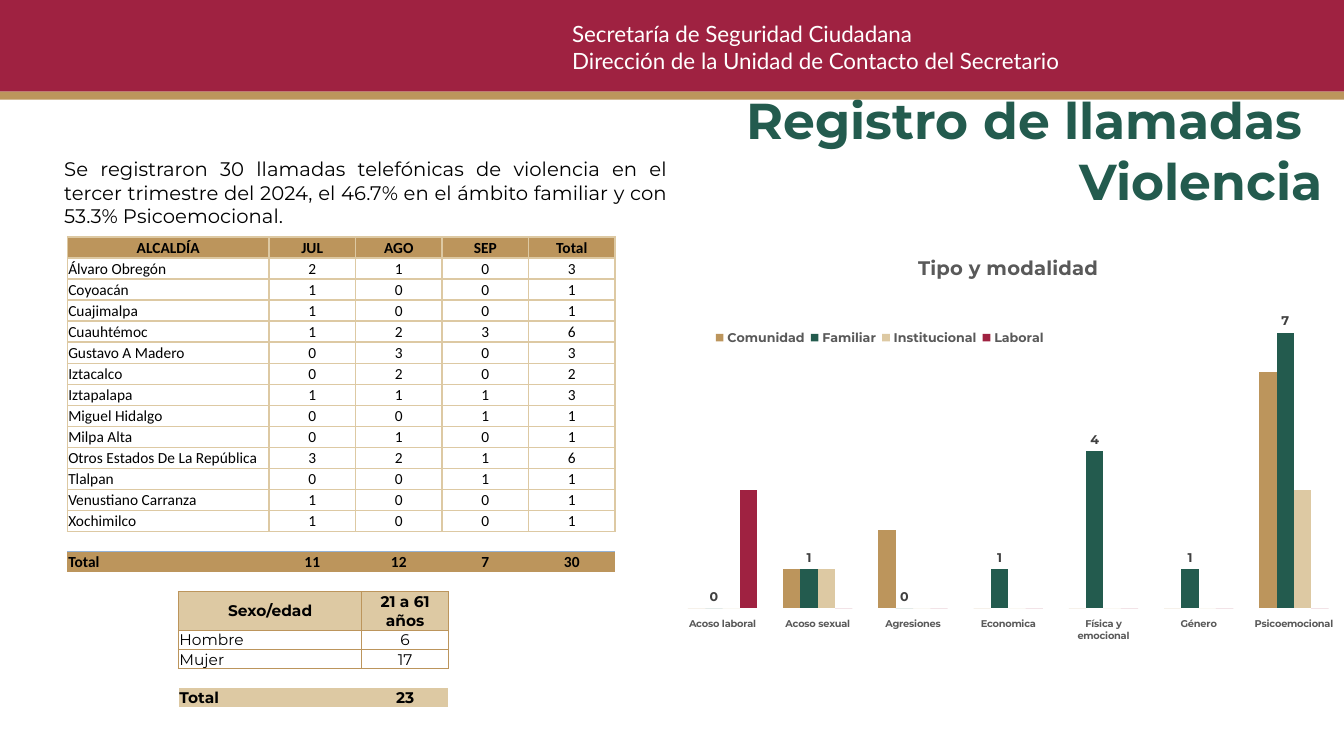
from dataclasses import dataclass
from typing import Optional

from lxml.etree import SubElement
from pptx import Presentation
from pptx.chart.data import CategoryChartData
from pptx.dml.color import RGBColor
from pptx.enum.chart import XL_CHART_TYPE as ChartType
from pptx.enum.chart import XL_LABEL_POSITION as LabelPosition
from pptx.enum.chart import XL_LEGEND_POSITION as LegendPosition
from pptx.enum.chart import XL_TICK_LABEL_POSITION as TickLabels
from pptx.enum.chart import XL_TICK_MARK as TickMark
from pptx.enum.shapes import MSO_SHAPE as Shape
from pptx.enum.text import MSO_ANCHOR as Anchor
from pptx.enum.text import PP_ALIGN as Align
from pptx.oxml import parse_xml
from pptx.oxml.ns import nsdecls, qn
from pptx.util import Cm, Pt

WINE = RGBColor(0x9F, 0x22, 0x41)
GOLD = RGBColor(0xBC, 0x95, 0x5C)
SAND = RGBColor(0xDD, 0xC9, 0xA3)
GREEN = RGBColor(0x23, 0x5B, 0x4E)
BLUE = RGBColor(0x95, 0xB3, 0xD7)
WHITE = RGBColor(0xFF, 0xFF, 0xFF)
BLACK = RGBColor(0, 0, 0)
GREY = RGBColor(0x59, 0x59, 0x59)
DARK_GREY = RGBColor(0x40, 0x40, 0x40)
MAIN_FONT = "Montserrat"


@dataclass
class Border:
    color: RGBColor
    width: float


@dataclass
class Grid:
    left: float
    top: float
    widths: list[float]
    heights: list[float]
    rows: list[list]  # header, body, an empty row, totals
    font: str
    fill: RGBColor
    border: Border
    total_rule: Optional[Border] = None


@dataclass
class Series:
    name: str
    values: list[int]
    color: RGBColor


def style_font(font, name: str, size: float, color: RGBColor, bold: bool = False) -> None:
    font.name, font.size, font.bold = name, Pt(size), bold
    font.color.rgb = color


def add_band(page, top: float, height: float, color: RGBColor) -> None:
    band = page.shapes.add_shape(Shape.RECTANGLE, 0, Cm(top), deck.slide_width, Cm(height))
    band.shadow.inherit = False
    band.fill.solid()
    band.fill.fore_color.rgb = color
    band.line.fill.background()


def add_text(page, place: tuple, text: str, font: str, size: float,
             color: RGBColor, align: Align) -> None:
    box = page.shapes.add_textbox(*map(Cm, place))
    box.text_frame.word_wrap = True
    box.text_frame.text = text
    for para in box.text_frame.paragraphs:
        para.alignment = align
        style_font(para.runs[0].font, font, size, color)


def set_borders(cell, sides: dict) -> None:
    properties = cell._tc.get_or_add_tcPr()
    for side in "LRTB":
        border = sides.get(side)
        line = SubElement(properties, qn(f"a:ln{side}"))
        if border is None:
            SubElement(line, qn("a:noFill"))
            continue
        line.set("w", str(Pt(border.width)))
        fill = SubElement(line, qn("a:solidFill"))
        SubElement(fill, qn("a:srgbClr")).set("val", str(border.color))


def add_grid(page, grid: Grid) -> None:
    frame = page.shapes.add_table(len(grid.rows), len(grid.widths), Cm(grid.left), Cm(grid.top),
                                  Cm(sum(grid.widths)), Cm(sum(grid.heights)))
    table = frame.table
    table.first_row = table.horz_banding = False
    for column, width in zip(table.columns, grid.widths):
        column.width = Cm(width)
    for row, height in zip(table.rows, grid.heights):
        row.height = Cm(height)

    last = len(grid.rows) - 1
    for r, values in enumerate(grid.rows):
        if r < last - 1:
            sides = dict.fromkeys("LRTB", grid.border)
        elif r == last - 1:
            sides = {"T": grid.border, "B": grid.total_rule}
        else:
            sides = {"T": grid.total_rule}
        strong = r in (0, last)
        for c, value in enumerate(values):
            cell = table.cell(r, c)
            set_borders(cell, sides)
            if strong:
                cell.fill.solid()
                cell.fill.fore_color.rgb = grid.fill
            else:
                cell.fill.background()
            cell.margin_left = cell.margin_right = cell.margin_top = Cm(0.02)
            cell.margin_bottom = 0
            cell.vertical_anchor = Anchor.MIDDLE
            para = cell.text_frame.paragraphs[0]
            if value == "":
                SubElement(para._p, qn("a:endParaRPr")).set("sz", "800")
                continue
            para.text = str(value)
            para.alignment = Align.CENTER if c or r == 0 else Align.LEFT
            style_font(para.runs[0].font, grid.font, 11, BLACK, strong)


def make_layout(x: float, y: float, w: float, h: float, inner: bool = False):
    target = '<c:layoutTarget val="inner"/>' if inner else ""
    return parse_xml(
        f'<c:layout {nsdecls("c")}><c:manualLayout>{target}'
        '<c:xMode val="edge"/><c:yMode val="edge"/>'
        f'<c:x val="{x}"/><c:y val="{y}"/><c:w val="{w}"/><c:h val="{h}"/>'
        '</c:manualLayout></c:layout>')


def add_violence_chart(page, categories: list[str], series_list: list[Series]) -> None:
    data = CategoryChartData()
    data.categories = categories
    for item in series_list:
        data.add_series(item.name, item.values)
    chart = page.shapes.add_chart(ChartType.COLUMN_CLUSTERED, Cm(16.66), Cm(5.97),
                                  Cm(17.5), Cm(11.02), data).chart
    style_font(chart.font, MAIN_FONT, 10, BLACK, True)

    chart.has_title = True
    chart.chart_title.text_frame.text = "Tipo y modalidad"
    style_font(chart.chart_title.text_frame.paragraphs[0].runs[0].font, MAIN_FONT, 14, GREY, True)

    chart.has_legend = True
    chart.legend.position = LegendPosition.BOTTOM
    chart.legend.include_in_layout = False
    style_font(chart.legend.font, MAIN_FONT, 9, GREY, True)

    axis = chart.category_axis
    axis.major_tick_mark = TickMark.NONE
    axis.tick_label_position = TickLabels.LOW
    axis.format.line.fill.background()
    style_font(axis.tick_labels.font, MAIN_FONT, 7, GREY, True)
    chart.value_axis.visible = False
    chart.value_axis.has_major_gridlines = False
    chart.value_axis.minimum_scale, chart.value_axis.maximum_scale = 0, 8

    plot = chart.plots[0]
    plot.gap_width, plot.overlap, plot.vary_by_categories = 150, 0, False
    for series, item in zip(plot.series, series_list):
        series.format.fill.solid()
        series.format.fill.fore_color.rgb = item.color
        series.invert_if_negative = False
        if item.name == "Familiar":
            labels = series.data_labels
            labels.show_value = True
            labels.position = LabelPosition.OUTSIDE_END
            style_font(labels.font, MAIN_FONT, 9, DARK_GREY, True)

    # Fixed places for the plot and the legend
    area = chart._chartSpace.chart.plotArea
    legend = chart.legend._element
    for parent in (area, legend):
        for layout in parent.findall(qn("c:layout")):
            parent.remove(layout)
    area.insert(0, make_layout(0.02, 0.13, 0.96, 0.72, inner=True))
    legend.find(qn("c:legendPos")).addnext(make_layout(0.07, 0.2, 0.49, 0.06))


deck = Presentation()
deck.slide_width, deck.slide_height = Cm(33.87), Cm(19.05)
page = deck.slides.add_slide(deck.slide_layouts[5])

# Header
add_band(page, 0, 2.31, WINE)
add_band(page, 2.31, 0.2, GOLD)
add_text(page, (14.17, 0.38, 16.94, 1.63),
         "Secretaría de Seguridad Ciudadana\nDirección de la Unidad de Contacto del Secretario",
         "Lato", 16, WHITE, Align.LEFT)

# Title and summary
title = page.shapes.title
title.left, title.top, title.width, title.height = map(Cm, (18.42, 2.13, 15.16, 3.33))
title.text_frame.text = "Registro de llamadas \nViolencia"
title.text_frame.word_wrap = False
title.text_frame.vertical_anchor = Anchor.TOP
for para, align in zip(title.text_frame.paragraphs, (Align.CENTER, Align.RIGHT)):
    para.alignment = align
    style_font(para.runs[0].font, MAIN_FONT, 36, GREEN, True)
add_text(page, (1.37, 3.84, 15.7, 3.25),
         "Se registraron 30 llamadas telefónicas de violencia en el tercer trimestre del 2024, "
         "el 46.7% en el ámbito familiar y con 53.3% Psicoemocional.",
         MAIN_FONT, 14, BLACK, Align.JUSTIFY)

# Tables
add_grid(page, Grid(4.5, 14.91, [4.62, 2.18], [0.97] + [0.48] * 4, [
    ["Sexo/edad", "21 a 61 años"], ["Hombre", 6], ["Mujer", 17], [""] * 2, ["Total", 23],
], MAIN_FONT, SAND, Border(GOLD, 1)))

calls = {
    "Álvaro Obregón": (2, 1, 0), "Coyoacán": (1, 0, 0), "Cuajimalpa": (1, 0, 0),
    "Cuauhtémoc": (1, 2, 3), "Gustavo A Madero": (0, 3, 0), "Iztacalco": (0, 2, 0),
    "Iztapalapa": (1, 1, 1), "Miguel Hidalgo": (0, 0, 1), "Milpa Alta": (0, 1, 0),
    "Otros Estados De La República": (3, 2, 1), "Tlalpan": (0, 0, 1),
    "Venustiano Carranza": (1, 0, 0), "Xochimilco": (1, 0, 0),
}
months = [sum(month) for month in zip(*calls.values())]
call_rows = [["ALCALDÍA", "JUL", "AGO", "SEP", "Total"],
             *([name, *counts, sum(counts)] for name, counts in calls.items()),
             [""] * 5, ["Total", *months, sum(months)]]
add_grid(page, Grid(1.7, 5.97, [5.08] + [2.18] * 4, [0.53] * 14 + [0.51] * 2, call_rows,
                    "Calibri", GOLD, Border(SAND, 1), Border(BLUE, 0.5)))

# Chart
add_violence_chart(
    page,
    ["Acoso laboral", "Acoso sexual", "Agresiones", "Economica", "Física y emocional",
     "Género", "Psicoemocional"],
    [Series("Comunidad", [0, 1, 2, 0, 0, 0, 6], GOLD),
     Series("Familiar", [0, 1, 0, 1, 4, 1, 7], GREEN),
     Series("Institucional", [0, 1, 0, 0, 0, 0, 3], SAND),
     Series("Laboral", [3, 0, 0, 0, 0, 0, 0], WINE)])

deck.save("out.pptx")
